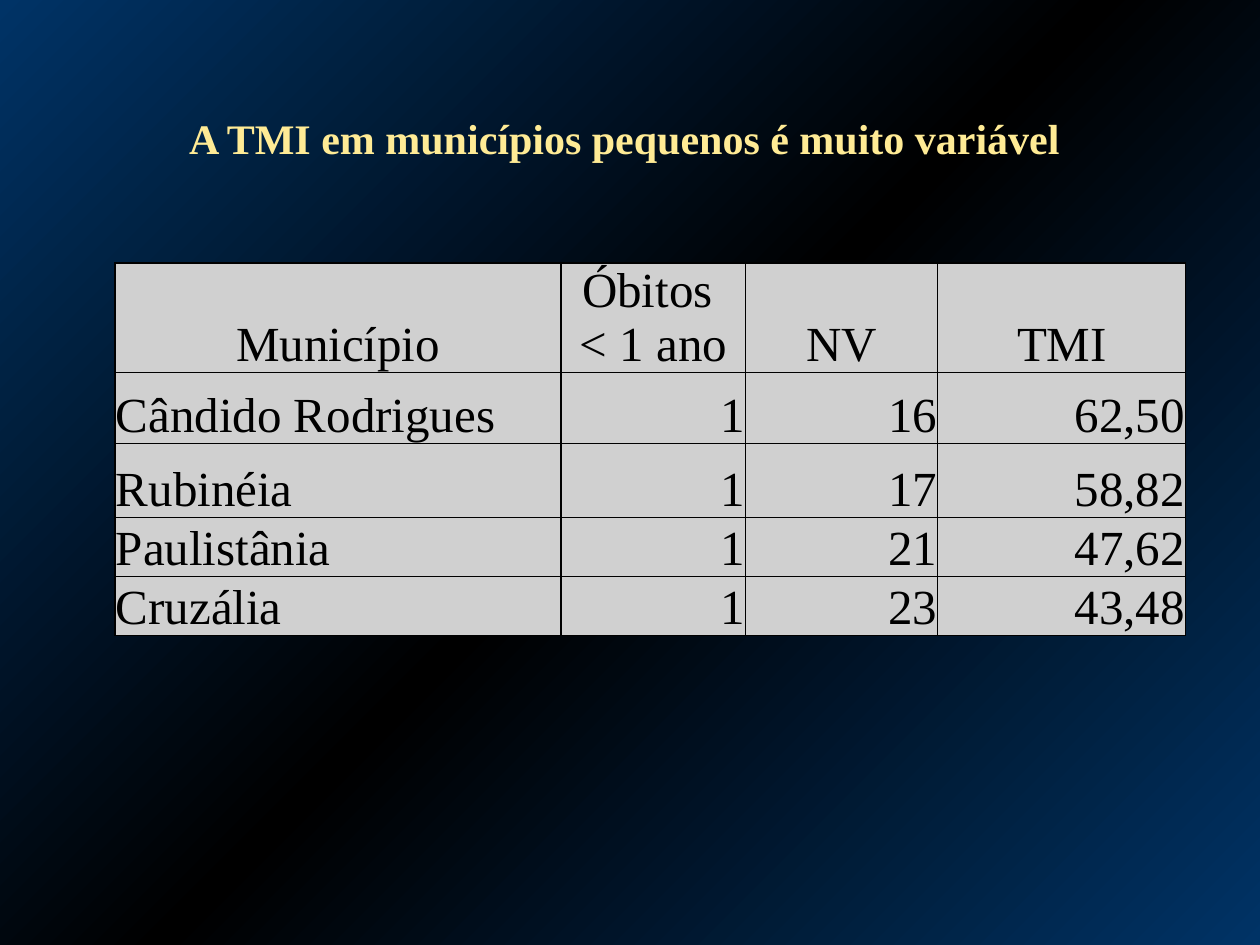
from copy import deepcopy

from lxml import etree
from pptx import Presentation
from pptx.dml.color import RGBColor
from pptx.enum.text import MSO_ANCHOR, PP_ALIGN
from pptx.oxml.ns import qn
from pptx.util import Emu, Pt

LEFT, CENTER, RIGHT = PP_ALIGN.LEFT, PP_ALIGN.CENTER, PP_ALIGN.RIGHT
MIDDLE, BOTTOM = MSO_ANCHOR.MIDDLE, MSO_ANCHOR.BOTTOM
NAVY = RGBColor(0x00, 0x33, 0x66)
BLACK = RGBColor(0x00, 0x00, 0x00)
GRAY = RGBColor(0xD0, 0xD0, 0xD0)
CREAM = RGBColor(0xFF, 0xEB, 0x95)
FONT = "Times New Roman"


def px(n):
    return Emu(round(n * 914400 / 126))


def style(para, size, color, bold, align):
    para.alignment = align
    font = para.font
    font.name, font.size, font.bold = FONT, Pt(size), bold
    font.color.rgb = color


deck = Presentation()
deck.slide_width, deck.slide_height = px(1260), px(945)
slide = deck.slides.add_slide(deck.slide_layouts[5])

# Background: navy to black to navy along the diagonal
fill = slide.background.fill
fill.gradient()
fill.gradient_angle = 315
for stop in fill.gradient_stops:
    stop.color.rgb = NAVY
stops = slide._element.find(".//" + qn("a:gsLst"))
stops.insert(1, deepcopy(stops[0]))
for stop, place, color in zip(fill.gradient_stops, (0, 0.5, 1), (NAVY, BLACK, NAVY)):
    stop.position = place
    stop.color.rgb = color

# Title
title = slide.shapes.title
title.left, title.top, title.width, title.height = px(171), px(106), px(907), px(63)
frame = title.text_frame
frame.text = "A TMI em municípios pequenos é muito variável"
frame.word_wrap = False
frame.vertical_anchor = MIDDLE
style(frame.paragraphs[0], 24, CREAM, True, CENTER)

# Table
rows = [
    ("Município", "Óbitos \n< 1 ano", "NV", "TMI"),
    ("Cândido Rodrigues", "1", "16", "62,50"),
    ("Rubinéia", "1", "17", "58,82"),
    ("Paulistânia", "1", "21", "47,62"),
    ("Cruzália", "1", "23", "43,48"),
]
widths = (446, 185, 192, 248)
heights = (105, 71, 74, 59, 59)
table = slide.shapes.add_table(
    len(rows), len(widths), px(115), px(263), px(sum(widths)), px(sum(heights))
).table
table.first_row = table.horz_banding = False
for col, width in zip(table.columns, widths):
    col.width = px(width)
for row, height in zip(table.rows, heights):
    row.height = px(height)

for r, row in enumerate(rows):
    for c, text in enumerate(row):
        cell = table.cell(r, c)
        cell.text = text
        cell.vertical_anchor = BOTTOM
        cell.margin_left = cell.margin_right = cell.margin_top = px(1)
        cell.margin_bottom = 0
        align = CENTER if r == 0 else LEFT if c == 0 else RIGHT
        for para in cell.text_frame.paragraphs:
            style(para, 28, BLACK, False, align)

        # Borders come before the fill in the cell properties
        props = cell._tc.get_or_add_tcPr()
        for side in ("a:lnL", "a:lnR", "a:lnT", "a:lnB"):
            line = etree.SubElement(props, qn(side), w=str(Pt(0.75)))
            solid = etree.SubElement(line, qn("a:solidFill"))
            etree.SubElement(solid, qn("a:srgbClr"), val=str(BLACK))
        cell.fill.solid()
        cell.fill.fore_color.rgb = GRAY

deck.save("out.pptx")
